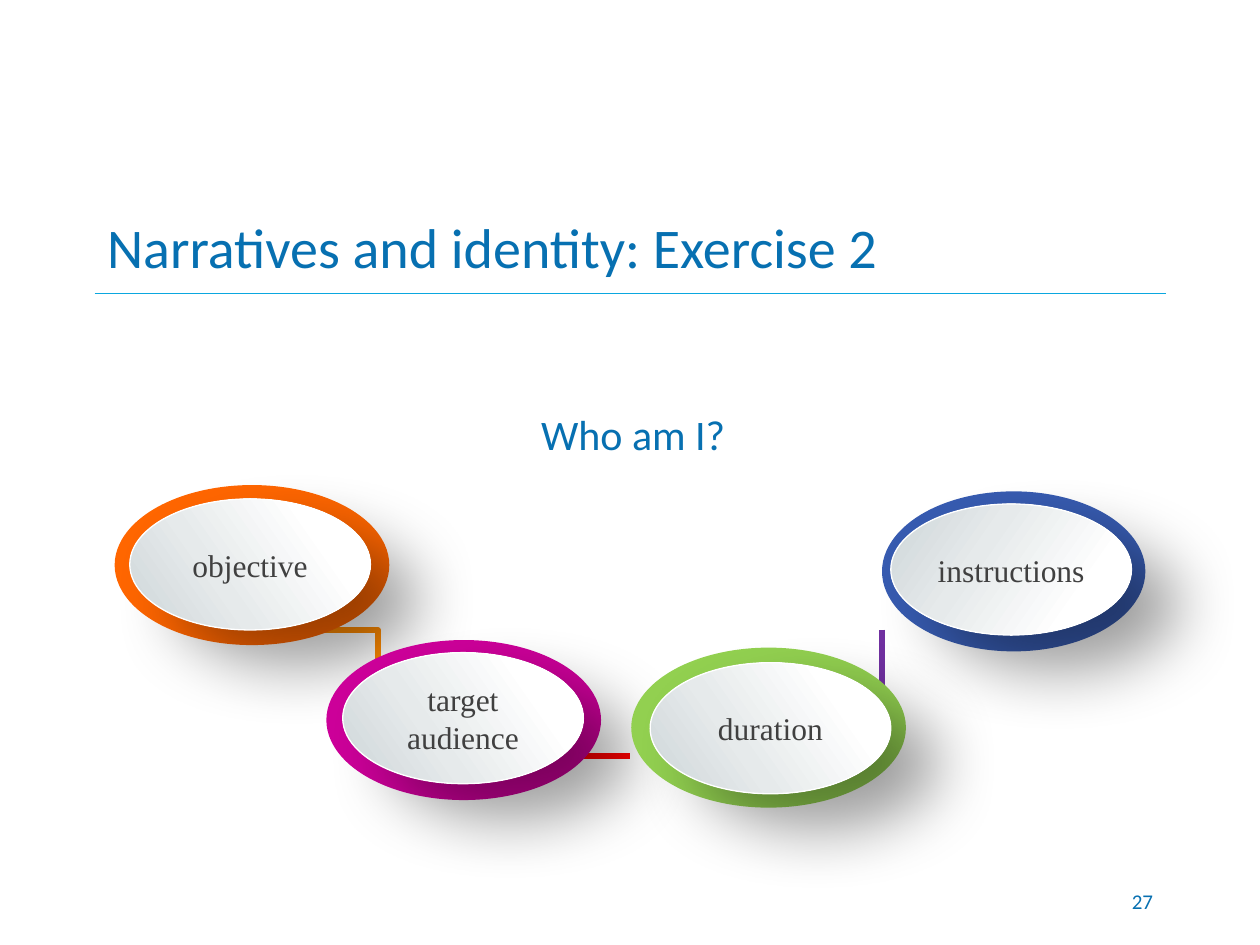
from lxml import etree
from pptx import Presentation
from pptx.dml.color import RGBColor
from pptx.enum.shapes import MSO_CONNECTOR as Conn, MSO_SHAPE as Kind
from pptx.enum.text import MSO_ANCHOR as Anchor, PP_ALIGN as Align
from pptx.oxml import parse_xml
from pptx.oxml.ns import nsdecls, qn
from pptx.util import Inches, Pt

WIDE, HIGH = 10, 7.5
EDGE = 0.75
BLUE, SKY, GREY = "0770B1", "0BA7DF", "404040"
RIM = 1.27
CORE = 1.91, 1.04
STOPS = [(0, "CDD5D8"), (37, "E6EAEB"), (77, "FFFFFF"), (100, "FFFFFF")]

NODES = [
    ("instructions", "375BB0", (7, 3.9, 2.09), (7.07, 4), 35),
    ("objective", "FF6600", (0.91, 3.85, 2.18), (1.03, 3.96), 325),
    ("target audience", "CC0099", (2.59, 5.08, 2.18), (2.72, 5.18), 325),
    ("duration", "92D050", (5.01, 5.14, 2.18), (5.16, 5.26), 325),
]
VIOLET = [
    ("7030A0", [(7.21, 5), (7.17, 5.04), (7.13, 5.08), (7.09, 5.13),
                (6.96, 5.26), (6.82, 5.38), (6.68, 5.5)]),
    ("7030A0", [(6.68, 5.49), (6.5, 5.61), (6.31, 5.71), (6.1, 5.79)]),
]
WARM = [
    ("FF0000", [(4.49, 5.88), (4.71, 5.9), (4.93, 5.91), (5.15, 5.9),
                (5.26, 5.89), (5.37, 5.88), (5.48, 5.86)]),
    ("FF8A00", [(2.47, 4.94), (2.68, 5.14), (2.94, 5.32), (3.22, 5.5)]),
]


def color(code):
    return RGBColor.from_string(code)


def write(shape, text, size, font, code, align, anchor=Anchor.MIDDLE):
    frame = shape.text_frame
    frame.word_wrap = True
    frame.vertical_anchor = anchor
    para = frame.paragraphs[0]
    para.alignment = align
    run = para.add_run()
    run.text = text
    run.font.size = Pt(size)
    run.font.name = font
    run.font.color.rgb = color(code)
    return para


def box(*place):
    return slide.shapes.add_textbox(*map(Inches, place))


def oval(*place):
    shape = slide.shapes.add_shape(Kind.OVAL, *map(Inches, place))
    shape.shadow.inherit = False
    return shape


def curve(code, dots, steps=12):
    spots = [dots[0]]
    for i in range(0, len(dots) - 1, 3):
        for n in range(1, steps + 1):
            t = n / steps
            parts = (1 - t) ** 3, 3 * t * (1 - t) ** 2, 3 * t * t * (1 - t), t ** 3
            spots.append(tuple(sum(w * dot[k] for w, dot in zip(parts, dots[i:i + 4]))
                               for k in (0, 1)))
    pen = slide.shapes.build_freeform(*spots[0], scale=Inches(1))
    pen.add_line_segments(spots[1:], close=False)
    shape = pen.convert_to_shape()
    shape.shadow.inherit = False
    shape.fill.background()
    shape.line.color.rgb = color(code)
    shape.line.width = Pt(3)


def shade(shape, angle):
    stops = "".join(f'<a:gs pos="{at * 1000}"><a:srgbClr val="{code}"/></a:gs>'
                    for at, code in STOPS)
    fill = parse_xml(f'<a:gradFill {nsdecls("a")} rotWithShape="1"><a:gsLst>{stops}</a:gsLst>'
                     f'<a:lin ang="{angle * 60000}" scaled="0"/></a:gradFill>')
    shape.line.color.rgb = color("FFFFFF")
    shape.line.width = Pt(0.75)
    props = shape._element.spPr
    props.find(qn("a:prstGeom")).addnext(fill)
    glow = parse_xml(f'<a:outerShdw {nsdecls("a")} blurRad="{Pt(38)}" dist="{Pt(33)}" '
                     'dir="2202000" algn="ctr" rotWithShape="0"><a:srgbClr val="000000">'
                     '<a:alpha val="39000"/></a:srgbClr></a:outerShdw>')
    props.find(qn("a:effectLst")).append(glow)


def node(text, code, rim, core, angle):
    ring = oval(*rim, RIM)
    ring.fill.solid()
    ring.fill.fore_color.rgb = color(code)
    ring.line.fill.background()
    disc = oval(*core, *CORE)
    shade(disc, angle)
    frame = disc.text_frame
    frame.margin_left = frame.margin_right = frame.margin_top = frame.margin_bottom = 0
    write(disc, text, 18, "Times New Roman", GREY, Align.CENTER)


deck = Presentation()
deck.slide_width, deck.slide_height = Inches(WIDE), Inches(HIGH)
slide = deck.slides.add_slide(deck.slide_layouts[5])

rule = slide.shapes.add_connector(
    Conn.STRAIGHT, *map(Inches, (EDGE, 2.33, WIDE - EDGE, 2.33)))
rule.line.color.rgb = color(SKY)
rule.line.width = Pt(0.75)
etree.SubElement(rule._element.spPr, qn("a:effectLst"))

title = slide.shapes.title
title.left, title.top, title.width, title.height = map(
    Inches, (EDGE, 1.58, WIDE - 2 * EDGE, 0.75))
write(title, "Narratives and identity: Exercise 2", 32, "Calibri", BLUE, Align.LEFT)
write(box(7.17, 6.95, 2.08, 0.4), "27", 12, "Calibri", BLUE, Align.RIGHT)

for arc in VIOLET:
    curve(*arc)
node(*NODES[0])
for arc in WARM:
    curve(*arc)
for item in NODES[1:]:
    node(*item)

para = write(box(2.59, 3.13, 4.87, 0.54), "Who am I?", 24, "Calibri", BLUE,
             Align.CENTER, Anchor.TOP)
para.line_spacing = 1.15
para.space_after = Pt(6)

deck.save("out.pptx")
